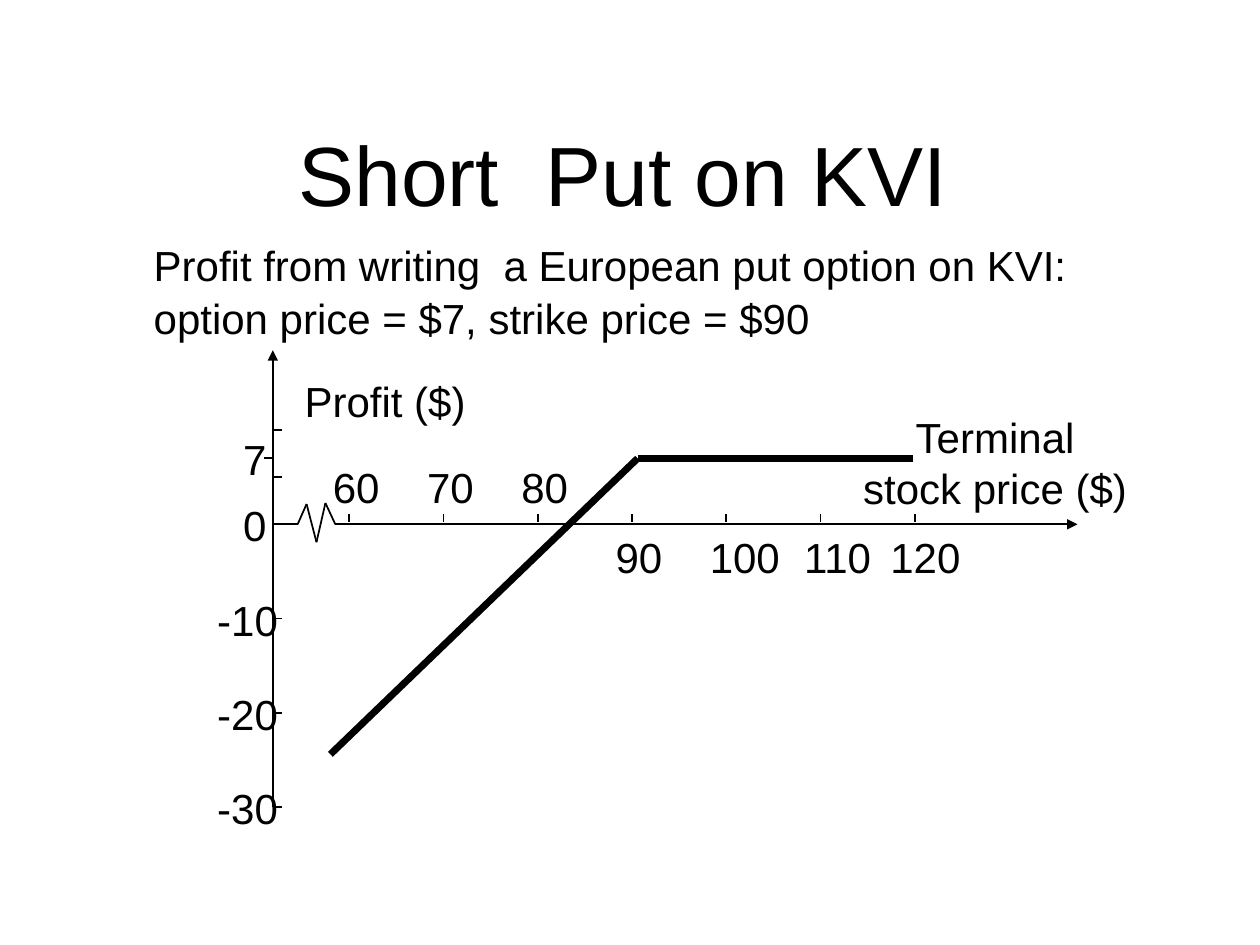
import itertools

import pptx
import pptx.dml.color
import pptx.enum.shapes
import pptx.enum.text
import pptx.oxml
import pptx.oxml.ns
import pptx.util
from pptx.util import Cm, Pt

COLORS = {"ink": "000000", "paper": "FFFFFF"}
FONT = "Arial"
STEP = 1.9  # cm for ten dollars, on both axes
LABEL_H = 1.27


def rgb(name):
    return pptx.dml.color.RGBColor.from_string(COLORS[name])


def add_text(slide, box, lines, size=24, align="LEFT", anchor="TOP", wrap=False):
    """Place one paragraph per line in box (left, top, width, height in cm)."""
    tf = slide.shapes.add_textbox(*map(Cm, box)).text_frame
    tf.word_wrap = wrap
    if not wrap:
        tf.auto_size = pptx.enum.text.MSO_AUTO_SIZE.SHAPE_TO_FIT_TEXT
    tf.vertical_anchor = getattr(pptx.enum.text.MSO_ANCHOR, anchor)
    tf.text = "\n".join(lines)
    for p in tf.paragraphs:
        p.alignment = getattr(pptx.enum.text.PP_ALIGN, align)
        p.font.size = Pt(size)
        p.font.name = FONT
        p.font.color.rgb = rgb("ink")
    return tf


def add_line(slide, start, end, width=1, arrow=False):
    line = slide.shapes.add_connector(
        pptx.enum.shapes.MSO_CONNECTOR.STRAIGHT, *map(Cm, start + end))
    line.line.color.rgb = rgb("ink")
    line.line.width = Pt(width)
    qn = pptx.oxml.ns.qn
    if arrow:
        ln = line.line._get_or_add_ln()
        ln.append(ln.makeelement(qn("a:tailEnd"), {"type": "triangle"}))
    sp_pr = line._element.spPr
    sp_pr.append(sp_pr.makeelement(qn("a:effectLst"), {}))


def add_title(slide, box):
    add_text(slide, box, ["Short  Put on KVI"], 48, "CENTER", "MIDDLE", wrap=True)


def add_summary(slide, box):
    text = ("Profit from writing  a European put option on KVI:\v"
            "option price = $7, strike price = $90")
    p = add_text(slide, box, [text], wrap=True).paragraphs[0]
    p.line_spacing = 1.04
    p.space_before = Pt(8)


def add_payoff_diagram(slide, box):
    left, top, width, height = box
    zero = top + 3.51

    def x_at(price):
        return left + 1.54 + (price - 60) / 10 * STEP

    def y_at(profit):
        return zero - profit / 10 * STEP

    def add_number(value, x, y):
        digits = len(str(abs(value)))
        w = 0.54 + 0.47 * digits + (0.28 if value < 0 else 0)
        add_text(slide, (x, y, w, LABEL_H), [str(value)])

    # Axes, with a break between zero and the first price
    add_line(slide, (left, top + height), (left, top), arrow=True)
    zigzag = [(0, 0), (0.5, 0), (0.68, -0.41), (0.88, 0.36), (1.06, -0.43), (1.26, 0)]
    points = [(left + dx, zero + dy) for dx, dy in zigzag]
    for start, end in itertools.pairwise(points):
        add_line(slide, start, end)
    add_line(slide, points[-1], (left + width, zero), arrow=True)

    # Profit scale
    for profit in (10, 5, -10, -20, -30):
        add_line(slide, (left, y_at(profit)), (left + 0.18, y_at(profit)))
    add_line(slide, (left, y_at(7)), (left - 0.18, y_at(7)))
    for profit in (7, 0, -10, -20, -30):
        indent = 1.37 if profit < 0 else 0.85
        add_number(profit, left - indent, y_at(profit) - 0.62)

    # Price scale: labels stay clear of the payoff line
    for price in range(60, 121, 10):
        x = x_at(price)
        add_line(slide, (x, zero - 0.2), (x, zero - 0.05))
        shift = 0.74 if price == 120 else 0.58
        add_number(price, x - shift, zero + (0.03 if price >= 90 else -1.4))

    add_text(slide, (left + 0.39, top + 0.38, 3.76, LABEL_H), ["Profit ($)"])
    add_text(slide, (left + 11.65, top + 1.12, 5.82, 2.29),
             ["Terminal", "stock price ($)"], align="CENTER")

    # Payoff
    knee = (x_at(90.6), y_at(7))
    add_line(slide, knee, (x_at(119.8), y_at(7)), width=4)
    add_line(slide, knee, (x_at(58), y_at(-24.4)), width=4)


def main():
    prs = pptx.Presentation()
    prs.slide_width, prs.slide_height = Cm(25.4), Cm(19.05)
    slide = prs.slides.add_slide(prs.slide_layouts[6])
    slide.background.fill.solid()
    slide.background.fill.fore_color.rgb = rgb("paper")
    add_title(slide, (1.03, 1.9, 23.06, 3.18))
    add_summary(slide, (2.85, 4.67, 21.75, 2.5))
    add_payoff_diagram(slide, (5.5, 7.06, 16.22, 9.2))
    prs.save("out.pptx")


if __name__ == "__main__":
    main()
